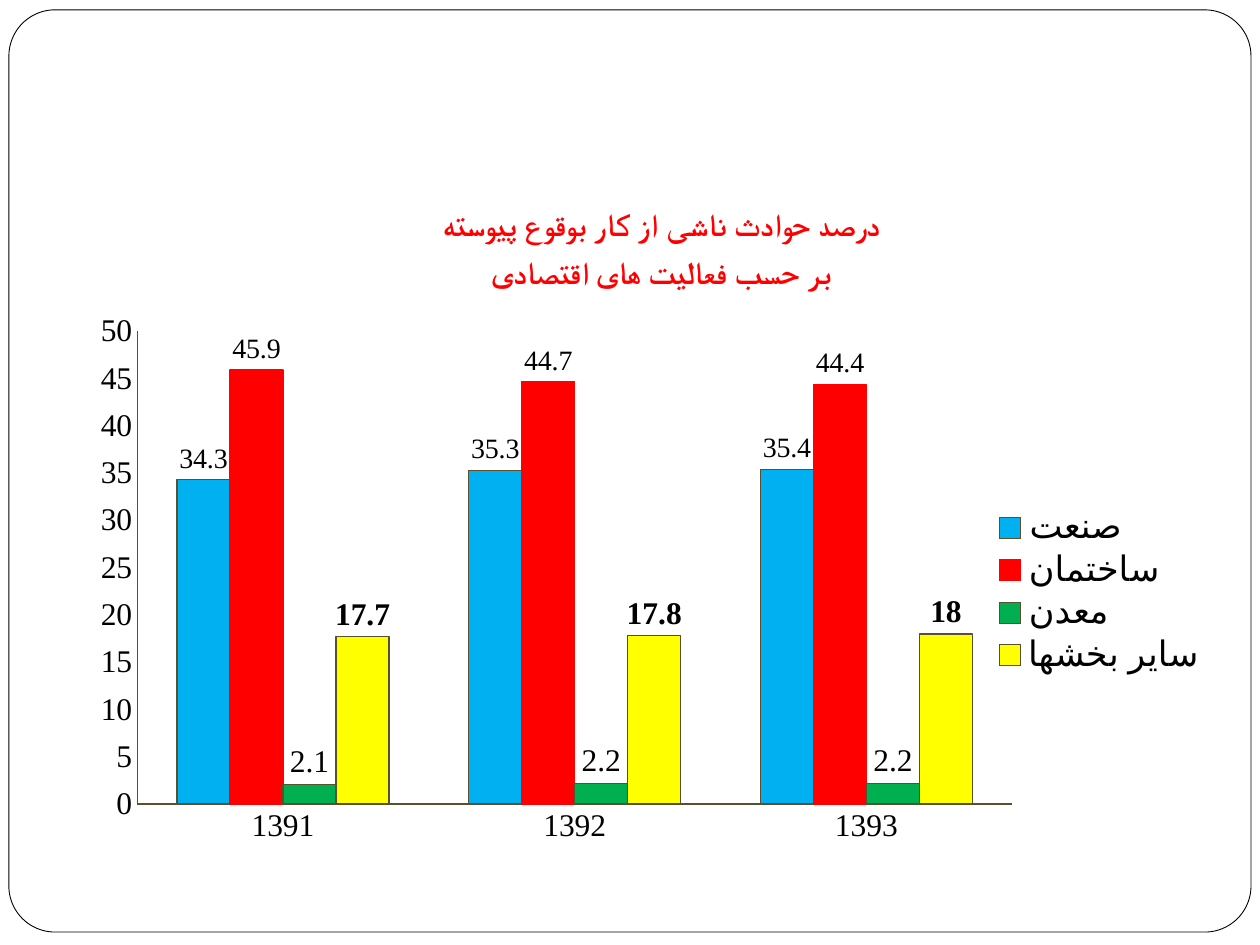
from lxml import etree
from pptx import Presentation
from pptx.chart.data import CategoryChartData
from pptx.dml.color import RGBColor
from pptx.enum.chart import XL_CHART_TYPE, XL_LABEL_POSITION, XL_LEGEND_POSITION, XL_TICK_MARK
from pptx.enum.shapes import MSO_SHAPE
from pptx.enum.text import PP_ALIGN
from pptx.oxml import parse_xml
from pptx.oxml.ns import nsdecls, qn
from pptx.util import Cm, Pt

COLORS = {
    "paper": "FFFFFF", "ink": "000000", "title": "FF0000", "outline": "595030",
    "industry": "00B0F0", "construction": "FF0000", "mining": "00B050", "other": "FFFF00",
}
FONT = "Times New Roman"
YEARS = ["1391", "1392", "1393"]
# name, values, colour, label size, bold labels
SECTORS = [
    ("صنعت", (34.3, 35.3, 35.4), "industry", 16, False),
    ("ساختمان", (45.9, 44.7, 44.4), "construction", 16, False),
    ("معدن", (2.1, 2.2, 2.2), "mining", 18, False),
    ("سایر بخشها", (17.7, 17.8, 18), "other", 18, True),
]


def rgb(name):
    return RGBColor.from_string(COLORS[name])


def style_font(font, size=18, color="ink", bold=False):
    font.name, font.size, font.bold = FONT, Pt(size), bold
    font.color.rgb = rgb(color)


def write_text(paragraph, text, space_before=5.8, hanging=0.76, **font_format):
    """Fill a centred right-to-left paragraph with one formatted run."""
    paragraph.alignment = PP_ALIGN.CENTER
    paragraph.space_before = Pt(space_before)
    properties = paragraph._p.get_or_add_pPr()
    properties.set("rtl", "1")
    properties.set("marL", str(Cm(hanging)))
    properties.set("indent", str(-Cm(hanging)))
    run = paragraph.add_run()
    run.text = text
    style_font(run.font, **font_format)
    etree.SubElement(run._r.get_or_add_rPr(), qn("a:cs")).set("typeface", FONT)


class SlideBuilder:
    def __init__(self, slide):
        self.slide = slide

    def frame(self, left, top, width, height, rounding):
        frame = self.slide.shapes.add_shape(MSO_SHAPE.ROUNDED_RECTANGLE, left, top, width, height)
        frame.adjustments[0] = rounding
        frame.shadow.inherit = False
        frame.fill.solid()
        frame.fill.fore_color.rgb = rgb("paper")
        frame.line.color.rgb = rgb("ink")
        frame.line.width = Pt(0.5)

    def title(self, left, top, width, height, lines):
        text_frame = self.slide.shapes.add_textbox(left, top, width, height).text_frame
        text_frame.word_wrap = True
        for index, line in enumerate(lines):
            paragraph = text_frame.add_paragraph() if index else text_frame.paragraphs[0]
            write_text(paragraph, line, color="title", bold=True)

    def column_chart(self, left, top, width, height, plot_area):
        data = CategoryChartData()
        data.categories = YEARS
        for name, values, *_ in SECTORS:
            data.add_series(name, values)
        chart = self.slide.shapes.add_chart(
            XL_CHART_TYPE.COLUMN_CLUSTERED, left, top, width, height, data).chart
        style_font(chart.font)
        chart.has_title = False

        # Legend
        chart.has_legend = True
        chart.legend.position = XL_LEGEND_POSITION.RIGHT
        chart.legend.include_in_layout = False
        style_font(chart.legend.font, size=20)

        # Axes
        for axis in (chart.category_axis, chart.value_axis):
            axis.has_major_gridlines = False
            axis.major_tick_mark = axis.minor_tick_mark = XL_TICK_MARK.NONE
            axis.format.line.color.rgb = rgb("outline")
            axis.format.line.width = Pt(0.75)
        chart.value_axis.minimum_scale = 0
        chart.value_axis.maximum_scale = 50
        chart.value_axis.major_unit = 5

        # Columns and their labels
        plot = chart.plots[0]
        plot.gap_width, plot.overlap, plot.vary_by_categories = 150, 0, False
        for series, (_, _, color, size, bold) in zip(plot.series, SECTORS):
            series.format.fill.solid()
            series.format.fill.fore_color.rgb = rgb(color)
            line_color = color if color == "construction" else "outline"
            series.format.line.color.rgb = rgb(line_color)
            series.format.line.width = Pt(0.75)
            labels = series.data_labels
            labels.show_value = True
            labels.position = XL_LABEL_POSITION.OUTSIDE_END
            style_font(labels.font, size=size, bold=bold)
        self.place_plot(chart, plot_area)

    def place_plot(self, chart, plot_area):
        area = chart._chartSpace.chart.plotArea
        for old_layout in area.findall(qn("c:layout")):
            area.remove(old_layout)
        settings = [("layoutTarget", "inner"), ("xMode", "edge"), ("yMode", "edge")]
        settings += zip("xywh", plot_area)
        tags = "".join(f'<c:{tag} val="{value}"/>' for tag, value in settings)
        area.insert(0, parse_xml(
            f'<c:layout {nsdecls("c")}><c:manualLayout>{tags}</c:manualLayout></c:layout>'))


def main():
    presentation = Presentation()
    presentation.slide_width, presentation.slide_height = Cm(25.4), Cm(19.05)
    builder = SlideBuilder(presentation.slides.add_slide(presentation.slide_layouts[6]))

    # Rounded page frame
    builder.frame(Cm(0.18), Cm(0.2), Cm(25.04), Cm(18.59), rounding=0.05)
    # Heading
    builder.title(Cm(2.54), Cm(4.01), Cm(21.59), Cm(12.7), [
        "درصد حوادث ناشی از کار بوقوع پیوسته",
        "بر حسب فعالیت های اقتصادی",
    ])
    # Accident shares by sector and year
    builder.column_chart(Cm(-0.1), Cm(6.02), Cm(24.71), Cm(11.81),
                         plot_area=(0.116, 0.056, 0.714, 0.807))
    presentation.save("out.pptx")


if __name__ == "__main__":
    main()
